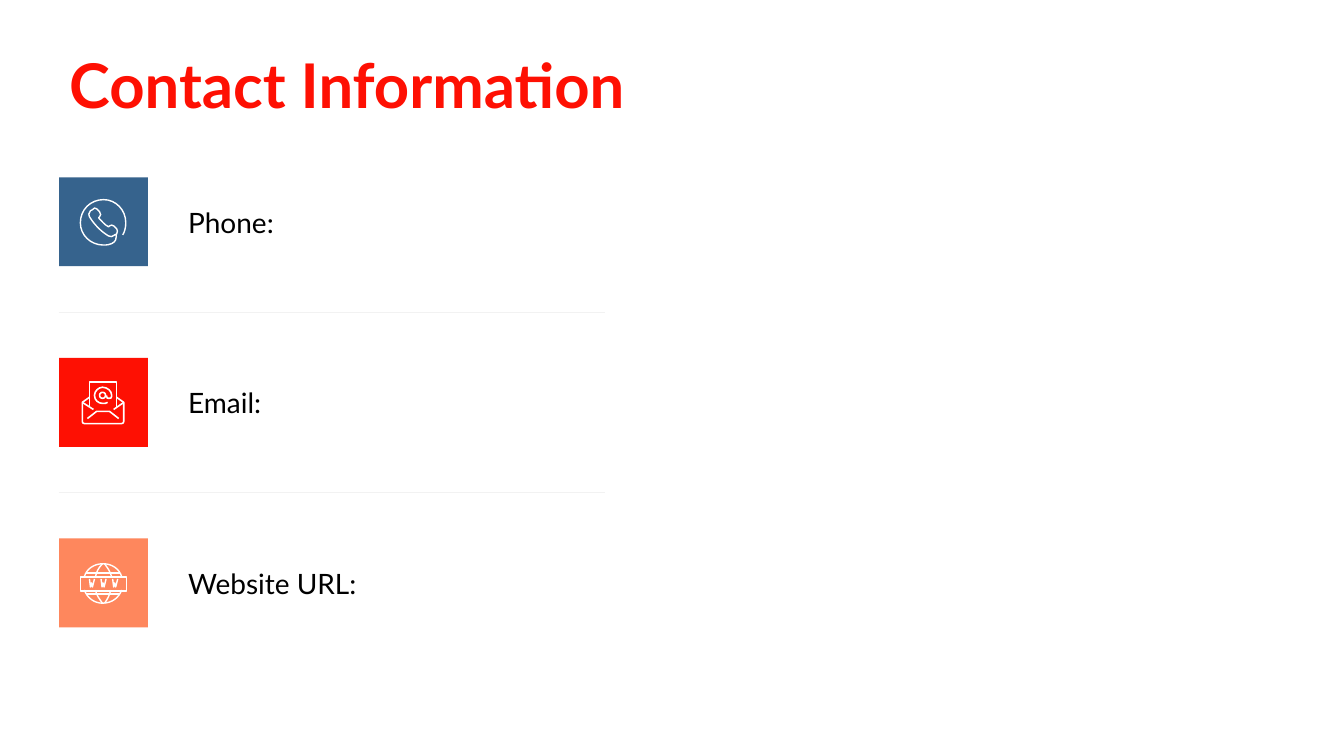
import lxml.etree
import pptx
import pptx.dml.color
import pptx.enum.shapes
import pptx.enum.text
import pptx.oxml.ns
import pptx.util
from pptx.util import Cm

RED = pptx.dml.color.RGBColor(0xFE, 0x10, 0x03)
BLUE = pptx.dml.color.RGBColor(0x36, 0x63, 0x8D)
CORAL = pptx.dml.color.RGBColor(0xFE, 0x87, 0x5D)
WHITE = pptx.dml.color.RGBColor(0xFF, 0xFF, 0xFF)
BLACK = pptx.dml.color.RGBColor(0x00, 0x00, 0x00)
PALE_GREY = pptx.dml.color.RGBColor(0xF2, 0xF2, 0xF2)

FONT = "Lato"
TILE_LEFT, TILE_SIZE = Cm(1.49), Cm(2.24)
FIRST_TOP, ROW_PITCH = Cm(4.47), Cm(4.55)
ICON_UNIT = TILE_SIZE / 88

# An icon path is a start point, then line ends (x, y) or Bézier curves (two controls and an end).
# Icon boxes are (kind, left, top, width, height). A tile is 88 units wide.
PHONE_PATHS = [
    [(40, 39), (41, 38, 42, 36, 40, 34), (37, 31), (36, 30, 34, 30, 33, 32), (31, 33),
     (29, 35, 29, 38, 30, 39), (35, 47, 42, 54, 49, 58), (51, 59, 53, 59, 55, 57), (57, 56),
     (58, 54, 58, 52, 57, 51), (54, 48), (53, 47, 51, 47, 50, 48), (49, 49),
     (45, 47, 42, 43, 39, 40), (40, 39)],
    [(56, 56), (57, 57, 59, 67, 44, 67), (31, 67, 21, 57, 21, 45), (21, 32, 31, 22, 44, 22),
     (56, 22, 66, 32, 66, 45), (66, 49, 65, 54, 63, 57)],
]
EMAIL_PATHS = [
    [(57, 39), (64, 44), (64, 63), (64, 64, 63, 65, 62, 65), (25, 65),
     (24, 65, 23, 64, 23, 63), (23, 44), (30, 39)],
    [(28, 60), (37, 53), (50, 53), (59, 60)],
    [(64, 44), (54, 51)],
    [(23, 44), (34, 51)],
    [(57, 49), (57, 24), (30, 24), (30, 49)],
    [(48, 44), (47, 45, 45, 45, 43, 45), (39, 45, 35, 42, 35, 37), (35, 33, 39, 29, 43, 29),
     (48, 29, 52, 33, 52, 37), (52, 38), (52, 40, 51, 40, 49, 40), (48, 40, 47, 40, 47, 38),
     (47, 37)],
]
GLOBE_PATHS = [
    [(25, 38), (27, 30, 35, 25, 43, 25), (44, 25), (52, 25, 60, 30, 62, 38)],
    [(62, 51), (59, 59, 52, 64, 43, 64), (35, 64, 28, 59, 25, 51)],
    [(36, 51), (37, 56, 40, 60, 43, 64)],
    [(43, 25), (39, 29, 37, 33, 36, 38)],
    [(51, 51), (50, 56, 48, 60, 45, 64)],
    [(45, 25), (48, 29, 51, 33, 52, 38)],
    [(27, 55), (60, 55)],
    [(27, 34), (60, 34)],
]
for letter_left in (30, 41.5, 53):
    GLOBE_PATHS.append([(letter_left + x, y) for x, y in
                        ((5, 40), (3, 48), (2, 44), (1, 48), (0, 40))])

SHAPES = pptx.enum.shapes.MSO_SHAPE
ROWS = [
    ("Phone:", BLUE, 1, PHONE_PATHS, []),
    ("Email:", RED, 1.13, EMAIL_PATHS, [(SHAPES.OVAL, 40, 34, 6, 6)]),
    ("Website URL:", CORAL, 1, GLOBE_PATHS, [(SHAPES.RECTANGLE, 21, 38, 46, 14)]),
]


def bend_lines(outline, path, top):
    """Turn the straight segments of an outline into the curves that its path asks for."""
    lines = list(outline._element.iter(pptx.oxml.ns.qn("a:lnTo")))
    for line, segment in zip(lines, path[1:]):
        if len(segment) == 2:
            continue
        line.tag = pptx.oxml.ns.qn("a:cubicBezTo")
        for index in (0, 1):
            x, y = segment[2 * index:2 * index + 2]
            control = lxml.etree.Element(pptx.oxml.ns.qn("a:pt"))
            control.set("x", str(round(TILE_LEFT + x * ICON_UNIT) - outline.left))
            control.set("y", str(round(top + y * ICON_UNIT) - outline.top))
            line.insert(index, control)


def add_line(shapes, start, end, color, weight):
    line = shapes.add_connector(pptx.enum.shapes.MSO_CONNECTOR.STRAIGHT, *start, *end)
    line.line.color.rgb = color
    line.line.width = pptx.util.Pt(weight)
    lxml.etree.SubElement(line._element.spPr, pptx.oxml.ns.qn("a:effectLst"))


presentation = pptx.Presentation()
presentation.slide_width = Cm(33.87)
presentation.slide_height = Cm(19.05)
slide = presentation.slides.add_slide(presentation.slide_layouts[5])

title = slide.shapes.title
title.left, title.top, title.width, title.height = Cm(1.49), Cm(1), Cm(30.89), Cm(2.46)
title.text_frame.vertical_anchor = pptx.enum.text.MSO_ANCHOR.MIDDLE
paragraph = title.text_frame.paragraphs[0]
paragraph.alignment = pptx.enum.text.PP_ALIGN.LEFT
paragraph.line_spacing = 0.9
run = paragraph.add_run()
run.text = "Contact Information"
run.font.name = FONT
run.font.size = pptx.util.Pt(44)
run.font.bold = True
run.font.color.rgb = RED

for index, (label, color, weight, paths, boxes) in enumerate(ROWS):
    top = FIRST_TOP + index * ROW_PITCH

    tile = slide.shapes.add_shape(SHAPES.RECTANGLE, TILE_LEFT, top, TILE_SIZE, TILE_SIZE)
    tile.shadow.inherit = False
    tile.fill.solid()
    tile.fill.fore_color.rgb = color
    tile.line.fill.background()

    text_box = slide.shapes.add_textbox(Cm(4.74), top, Cm(10.74), TILE_SIZE)
    frame = text_box.text_frame
    frame.word_wrap = True
    frame.vertical_anchor = pptx.enum.text.MSO_ANCHOR.MIDDLE
    frame.margin_left = frame.margin_top = frame.margin_right = frame.margin_bottom = 0
    run = frame.paragraphs[0].add_run()
    run.text = label
    run.font.name = FONT
    run.font.size = pptx.util.Pt(20)
    run.font.color.rgb = BLACK

    icon = slide.shapes.add_group_shape()
    outlines = []
    for path in paths:
        points = [(round(TILE_LEFT + segment[-2] * ICON_UNIT),
                   round(top + segment[-1] * ICON_UNIT)) for segment in path]
        if len(path) == 2 and len(path[1]) == 2:
            add_line(icon.shapes, *points, WHITE, weight)
            continue
        builder = icon.shapes.build_freeform(*points[0])
        builder.add_line_segments(points[1:], close=path[0] == path[-1])
        outline = builder.convert_to_shape()
        bend_lines(outline, path, top)
        outlines.append(outline)
    for kind, x, y, width, height in boxes:
        outlines.append(icon.shapes.add_shape(
            kind, round(TILE_LEFT + x * ICON_UNIT), round(top + y * ICON_UNIT),
            round(width * ICON_UNIT), round(height * ICON_UNIT)))
    for outline in outlines:
        outline.shadow.inherit = False
        outline.fill.background()
        outline.line.color.rgb = WHITE
        outline.line.width = pptx.util.Pt(weight)

    if index < len(ROWS) - 1:
        divider_y = top + Cm(3.39)
        add_line(slide.shapes, (Cm(1.48), divider_y), (Cm(15.24), divider_y), PALE_GREY, 0.5)

presentation.save("out.pptx")
